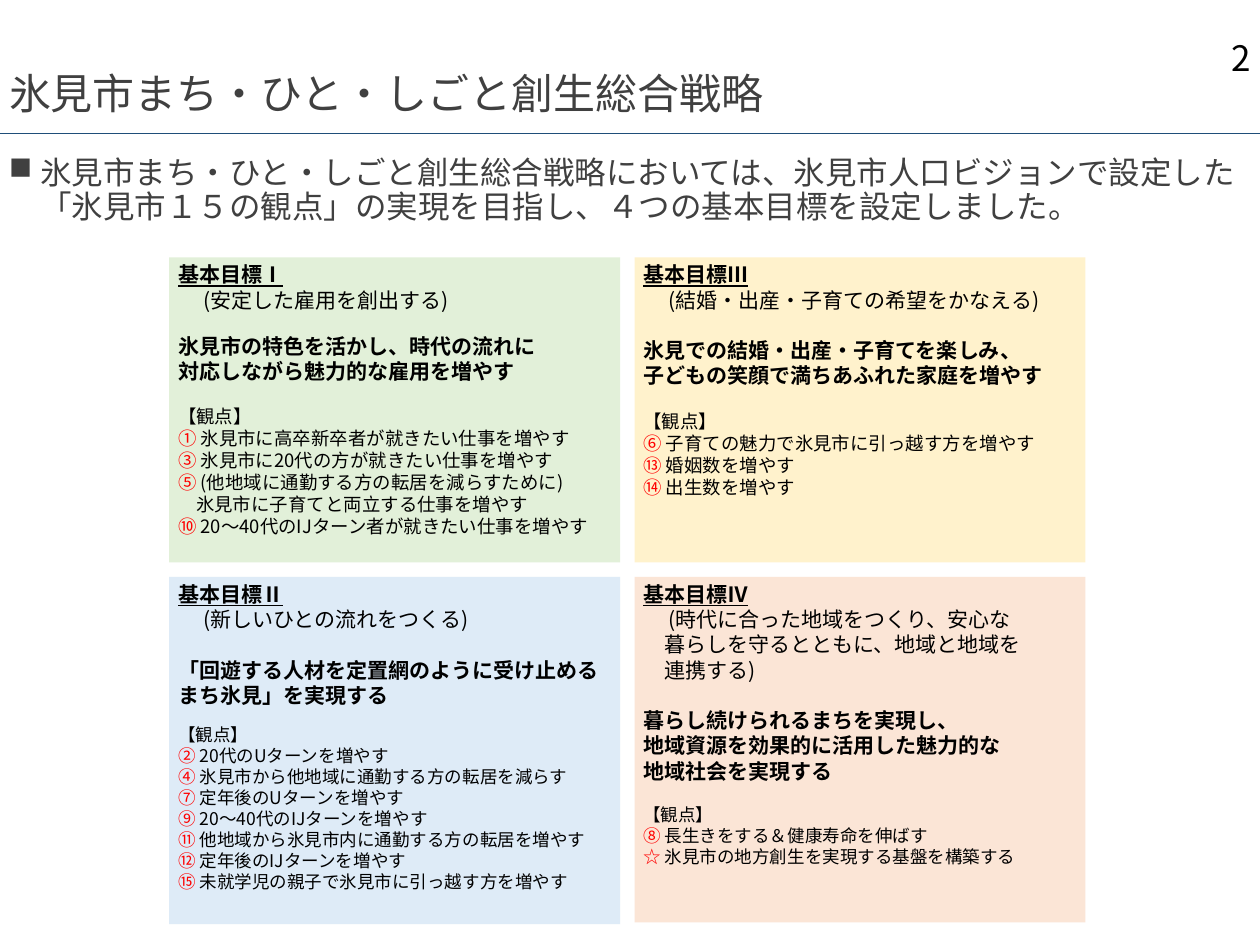
from lxml.etree import SubElement
from pptx import Presentation
from pptx.dml.color import RGBColor
from pptx.enum.shapes import MSO_CONNECTOR, MSO_SHAPE
from pptx.enum.text import MSO_ANCHOR, PP_ALIGN
from pptx.oxml.ns import qn
from pptx.util import Inches, Pt

FONT = "Noto Sans CJK JP"
BLACK = RGBColor(0, 0, 0)
GRAY = RGBColor(0x40, 0x40, 0x40)
RED = RGBColor(0xFF, 0, 0)
NAVY = RGBColor(0x1F, 0x4E, 0x79)
GREEN = RGBColor(0xE2, 0xF0, 0xD9)
BLUE = RGBColor(0xDE, 0xEB, 0xF7)
YELLOW = RGBColor(0xFF, 0xF2, 0xCC)
PEACH = RGBColor(0xFB, 0xE5, 0xD6)


def style(para, size, color=BLACK, bold=False, ratio=1.2):
    font = para.font
    font.name, font.size, font.bold = FONT, Pt(size), bold
    font.color.rgb = color
    para.alignment = PP_ALIGN.LEFT
    para.line_spacing = Pt(round(size * ratio, 1))
    for run in para.runs:
        SubElement(run._r.get_or_add_rPr(), qn("a:ea")).set("typeface", FONT)


def indent(para, left, first=0):
    props = para._p.get_or_add_pPr()
    props.set("marL", str(Inches(left)))
    props.set("indent", str(Inches(first)))


deck = Presentation()
deck.slide_width, deck.slide_height = Inches(14), Inches(10.5)
slide = deck.slides.add_slide(deck.slide_layouts[5])
shapes = slide.shapes

rule = shapes.add_connector(MSO_CONNECTOR.STRAIGHT, 0, Inches(1.48), Inches(14), Inches(1.48))
rule.line.color.rgb = NAVY
rule.line.width = Pt(0.5)
SubElement(rule._element.spPr, qn("a:effectLst"))

title = shapes.title
title.left, title.top, title.width, title.height = 0, Inches(0.87), Inches(14), Inches(0.4)
title.text_frame.text = "氷見市まち・ひと・しごと創生総合戦略"
title.text_frame.vertical_anchor = MSO_ANCHOR.MIDDLE
style(title.text_frame.paragraphs[0], 33.6, GRAY)
title.text_frame.paragraphs[0].line_spacing = 0.9

lead = shapes.add_textbox(0, Inches(1.69), Inches(14), Inches(1.01)).text_frame
lead.word_wrap = True
para = lead.paragraphs[0]
para.text = ("氷見市まち・ひと・しごと創生総合戦略においては、氷見市人口ビジョンで設定した"
             "「氷見市１５の観点」の実現を目指し、４つの基本目標を設定しました。")
style(para, 25.2, GRAY, ratio=1.08)
indent(para, 0.35, -0.35)
SubElement(para._p.get_or_add_pPr(), qn("a:buChar")).set("char", "■")

goals = [
    (1.88, 2.86, 3.39, GREEN, "基本目標Ⅰ", "(安定した雇用を創出する)",
     "氷見市の特色を活かし、時代の流れに\v対応しながら魅力的な雇用を増やす", 14, 14, 14.7,
     [("①", "氷見市に高卒新卒者が就きたい仕事を増やす"),
      ("③", "氷見市に20代の方が就きたい仕事を増やす"),
      ("⑤", "(他地域に通勤する方の転居を減らすために)"),
      ("", "氷見市に子育てと両立する仕事を増やす"),
      ("⑩", "20～40代のIJターン者が就きたい仕事を増やす")]),
    (1.88, 6.41, 3.86, BLUE, "基本目標Ⅱ", "(新しいひとの流れをつくる)",
     "「回遊する人材を定置網のように受け止めるまち氷見」を実現する", 16.8, 11.2, 14,
     [("②", "20代のUターンを増やす"),
      ("④", "氷見市から他地域に通勤する方の転居を減らす"),
      ("⑦", "定年後のUターンを増やす"),
      ("⑨", "20～40代のIJターンを増やす"),
      ("⑪", "他地域から氷見市内に通勤する方の転居を増やす"),
      ("⑫", "定年後のIJターンを増やす"),
      ("⑮", "未就学児の親子で氷見市に引っ越す方を増やす")]),
    (7.05, 2.86, 3.39, YELLOW, "基本目標Ⅲ", "(結婚・出産・子育ての希望をかなえる)",
     "氷見での結婚・出産・子育てを楽しみ、\v子どもの笑顔で満ちあふれた家庭を増やす", 16.8, 14.7, 14.7,
     [("⑥", "子育ての魅力で氷見市に引っ越す方を増やす"),
      ("⑬", "婚姻数を増やす"),
      ("⑭", "出生数を増やす")]),
    (7.05, 6.41, 3.84, PEACH, "基本目標Ⅳ",
     "(時代に合った地域をつくり、安心な\v暮らしを守るとともに、地域と地域を\v連携する)",
     "暮らし続けられるまちを実現し、\v地域資源を効果的に活用した魅力的な\v地域社会を実現する", 16.8, 14, 14,
     [("⑧", "長生きをする＆健康寿命を伸ばす"),
      ("☆", "氷見市の地方創生を実現する基盤を構築する")]),
]

for left, top, height, fill, name, theme, aim, gap, space, size, views in goals:
    box = shapes.add_shape(MSO_SHAPE.RECTANGLE, Inches(left), Inches(top), Inches(5.01), Inches(height))
    box.shadow.inherit = False
    box.fill.solid()
    box.fill.fore_color.rgb = fill
    box.line.fill.background()
    frame = box.text_frame
    frame.word_wrap = True
    frame.vertical_anchor = MSO_ANCHOR.TOP

    para = frame.paragraphs[0]
    para.text = name
    style(para, 16.8, bold=True)
    para.font.underline = True

    para = frame.add_paragraph()
    para.text = theme
    style(para, 16.8)
    indent(para, 0.23, 0.05)

    para = frame.add_paragraph()
    para.text = aim
    style(para, 16.8, bold=True)
    para.space_before = Pt(round(gap * 1.2, 1))

    para = frame.add_paragraph()
    para.text = "【観点】"
    style(para, size)
    para.space_before = Pt(round(space * 1.2, 1))

    for mark, view in views:
        para = frame.add_paragraph()
        if mark:
            run = para.add_run()
            run.text = mark + " "
            run.font.color.rgb = RED
        else:
            indent(para, 0.2)
        para.add_run().text = view
        style(para, size)

page = shapes.add_textbox(Inches(10.85), Inches(0.36), Inches(3.15), Inches(0.56)).text_frame
page.word_wrap = True
page.vertical_anchor = MSO_ANCHOR.MIDDLE
para = page.paragraphs[0]
para.text = "2"
style(para, 28)
para.alignment = PP_ALIGN.RIGHT

deck.save("out.pptx")
